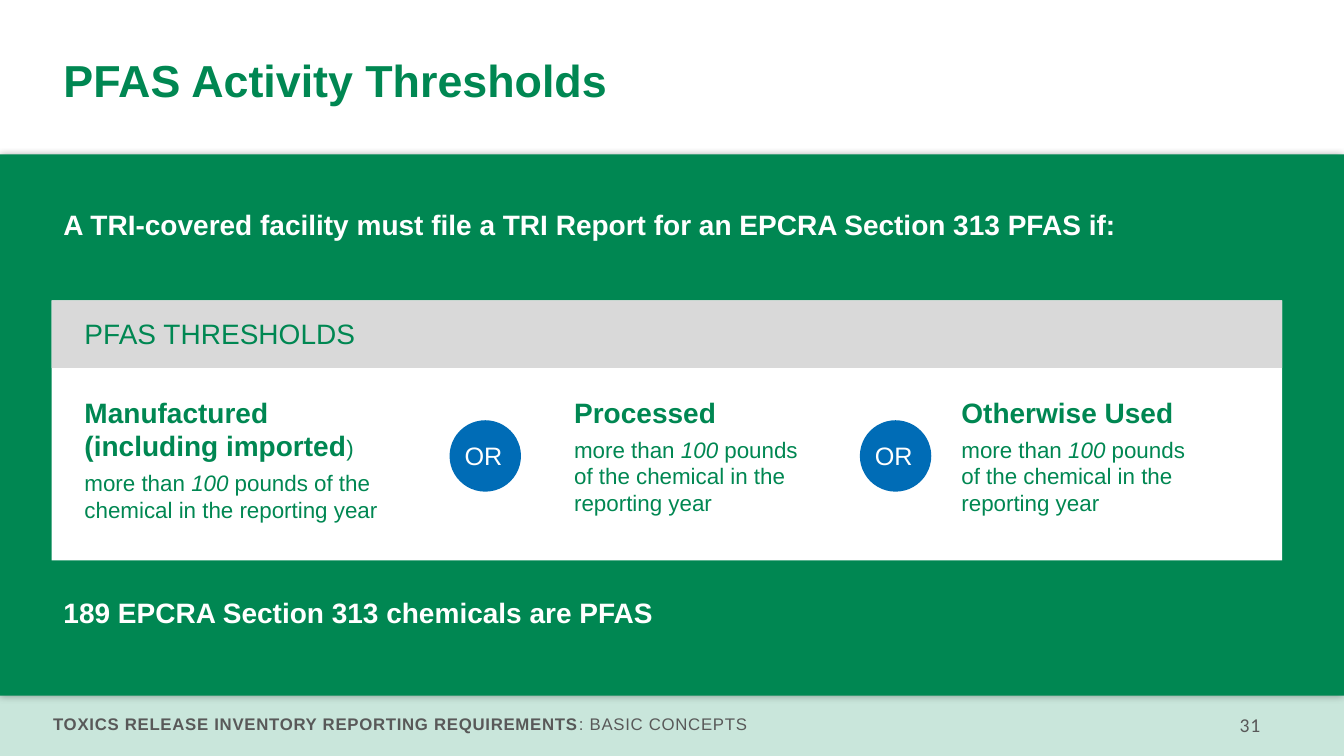
from dataclasses import dataclass

from lxml.etree import SubElement
from pptx import Presentation
from pptx.dml.color import RGBColor
from pptx.enum.shapes import MSO_SHAPE
from pptx.enum.text import MSO_ANCHOR, PP_ALIGN
from pptx.oxml.ns import qn
from pptx.shapes.autoshape import Shape
from pptx.slide import Slide
from pptx.text.text import _Paragraph
from pptx.util import Cm, Pt

GREEN = RGBColor(0x00, 0x87, 0x52)
PALE_GREEN = RGBColor(0xC9, 0xE6, 0xDB)
BLUE = RGBColor(0x00, 0x6C, 0xB6)
LIGHT_GREY = RGBColor(0xD9, 0xD9, 0xD9)
DARK_GREY = RGBColor(0x59, 0x59, 0x59)
WHITE = RGBColor(0xFF, 0xFF, 0xFF)

SLIDE_WIDTH, SLIDE_HEIGHT = 33.87, 19.05
MARGIN = 1.35
CARD_LEFT, CARD_TOP, CARD_WIDTH = 1.3, 7.57, 31.01
COLUMN_TOP, COLUMN_HEIGHT = 9.83, 3.38
OR_TOP, OR_SIZE = 10.59, 1.8
OR_LEFTS = (11.33, 21.67)


@dataclass(frozen=True)
class Box:
    """Left, top, width and height in centimetres."""
    left: float
    top: float
    width: float
    height: float

    def lengths(self) -> tuple[Cm, Cm, Cm, Cm]:
        return Cm(self.left), Cm(self.top), Cm(self.width), Cm(self.height)


@dataclass(frozen=True)
class Piece:
    """A stretch of text; None keeps the paragraph's own setting."""
    text: str
    size: float | None = None
    bold: bool | None = None
    italic: bool | None = None


@dataclass(frozen=True)
class Threshold:
    left: float
    width: float
    heading: tuple[Piece, ...]


THRESHOLDS = (
    Threshold(1.88, 8.56, (Piece("Manufactured (including imported", 20, True),
                           Piece(")", 16, False))),
    Threshold(14.22, 6.71, (Piece("Processed", 20, True),)),
    Threshold(23.98, 6.71, (Piece("Otherwise Used", 20, True),)),
)
AMOUNT = (
    Piece("more than "),
    Piece("100", italic=True),
    Piece(" pounds of the chemical in the reporting year"),
)


def add_panel(slide: Slide, box: Box, colour: RGBColor,
              preset: MSO_SHAPE = MSO_SHAPE.RECTANGLE) -> Shape:
    panel = slide.shapes.add_shape(preset, *box.lengths())
    panel.shadow.inherit = False
    panel.fill.solid()
    panel.fill.fore_color.rgb = colour
    panel.line.fill.background()
    return panel


def add_soft_shadow(panel: Shape) -> None:
    effects = panel._element.spPr.find(qn("a:effectLst"))
    shadow = SubElement(effects, qn("a:outerShdw"), blurRad=str(Pt(5)),
                        dist=str(Pt(1)), dir="5400000", rotWithShape="0")
    black = SubElement(shadow, qn("a:srgbClr"), val="000000")
    SubElement(black, qn("a:alpha"), val="34000")


def write(paragraph: _Paragraph, pieces: tuple[Piece, ...], size: float,
          colour: RGBColor, bold: bool = False, font: str = "Arial") -> None:
    paragraph.font.name = font
    paragraph.font.size = Pt(size)
    paragraph.font.bold = bold
    paragraph.font.color.rgb = colour
    for piece in pieces:
        run = paragraph.add_run()
        run.text = piece.text
        if piece.size is not None:
            run.font.size = Pt(piece.size)
        if piece.bold is not None:
            run.font.bold = piece.bold
        if piece.italic is not None:
            run.font.italic = piece.italic


def add_text(slide: Slide, box: Box, pieces: tuple[Piece, ...], size: float,
             colour: RGBColor, bold: bool = False, font: str = "Arial",
             wrap: bool = True) -> Shape:
    label = slide.shapes.add_textbox(*box.lengths())
    label.text_frame.word_wrap = wrap
    write(label.text_frame.paragraphs[0], pieces, size, colour, bold, font)
    return label


def space_letters(label: Shape) -> None:
    for run in label.text_frame.paragraphs[0].runs:
        run._r.get_or_add_rPr().set("spc", "50")


def add_threshold(slide: Slide, threshold: Threshold) -> None:
    box = Box(threshold.left, COLUMN_TOP, threshold.width, COLUMN_HEIGHT)
    column = add_text(slide, box, threshold.heading, 20, GREEN)
    amount = column.text_frame.add_paragraph()
    amount.space_before = Pt(5)
    write(amount, AMOUNT, 16, GREEN)


def add_or(slide: Slide, left: float) -> None:
    add_panel(slide, Box(left, OR_TOP, OR_SIZE, OR_SIZE), BLUE, MSO_SHAPE.OVAL)
    add_text(slide, Box(left + 0.13, OR_TOP + 0.38, 1.47, 1.02),
             (Piece("OR"),), 18, WHITE, wrap=False)


def add_frame(slide: Slide) -> None:
    """Draw the green field and the footer."""
    add_panel(slide, Box(0, 17.07, SLIDE_WIDTH, 1.98), PALE_GREEN)
    add_soft_shadow(add_panel(slide, Box(0, 3.89, SLIDE_WIDTH, 13.64), GREEN))
    footer = add_text(
        slide, Box(1.09, 17.86, 21.39, 0.76),
        (Piece("TOXICS RELEASE INVENTORY REPORTING REQUIREMENTS", bold=True),
         Piece(": BASIC CONCEPTS")), 12, DARK_GREY)
    space_letters(footer)
    page_number = add_text(slide, Box(28.63, 17.83, 3.38, 0.86),
                           (Piece("31"),), 14, DARK_GREY, font="Calibri")
    page_number.text_frame.paragraphs[0].alignment = PP_ALIGN.RIGHT
    space_letters(page_number)


def main() -> None:
    presentation = Presentation()
    presentation.slide_width = Cm(SLIDE_WIDTH)
    presentation.slide_height = Cm(SLIDE_HEIGHT)
    slide = presentation.slides.add_slide(presentation.slide_layouts[6])

    add_frame(slide)
    title = add_text(slide, Box(MARGIN, 1.07, 30.66, 2.06),
                     (Piece("PFAS Activity Thresholds"),), 32, GREEN, bold=True)
    title.text_frame.vertical_anchor = MSO_ANCHOR.MIDDLE
    title.text_frame.paragraphs[0].line_spacing = 0.9
    add_text(slide, Box(MARGIN, 5.11, 30.66, 2.39),
             (Piece("A TRI-covered facility must file a TRI Report for an "
                    "EPCRA Section 313 PFAS if:"),), 20, WHITE, bold=True)

    add_panel(slide, Box(CARD_LEFT, CARD_TOP, CARD_WIDTH, 6.55), WHITE)
    add_panel(slide, Box(CARD_LEFT, CARD_TOP, CARD_WIDTH, 1.7), LIGHT_GREY)
    add_text(slide, Box(THRESHOLDS[0].left, 7.85, 24.82, 1.17),
             (Piece("PFAS THRESHOLDS"),), 20, GREEN)
    for threshold in THRESHOLDS:
        add_threshold(slide, threshold)
    for left in OR_LEFTS:
        add_or(slide, left)

    add_text(slide, Box(MARGIN, 14.88, 25.35, 1.12),
             (Piece("189 EPCRA Section 313 chemicals are PFAS"),),
             20, WHITE, bold=True)
    presentation.save("out.pptx")


if __name__ == "__main__":
    main()
